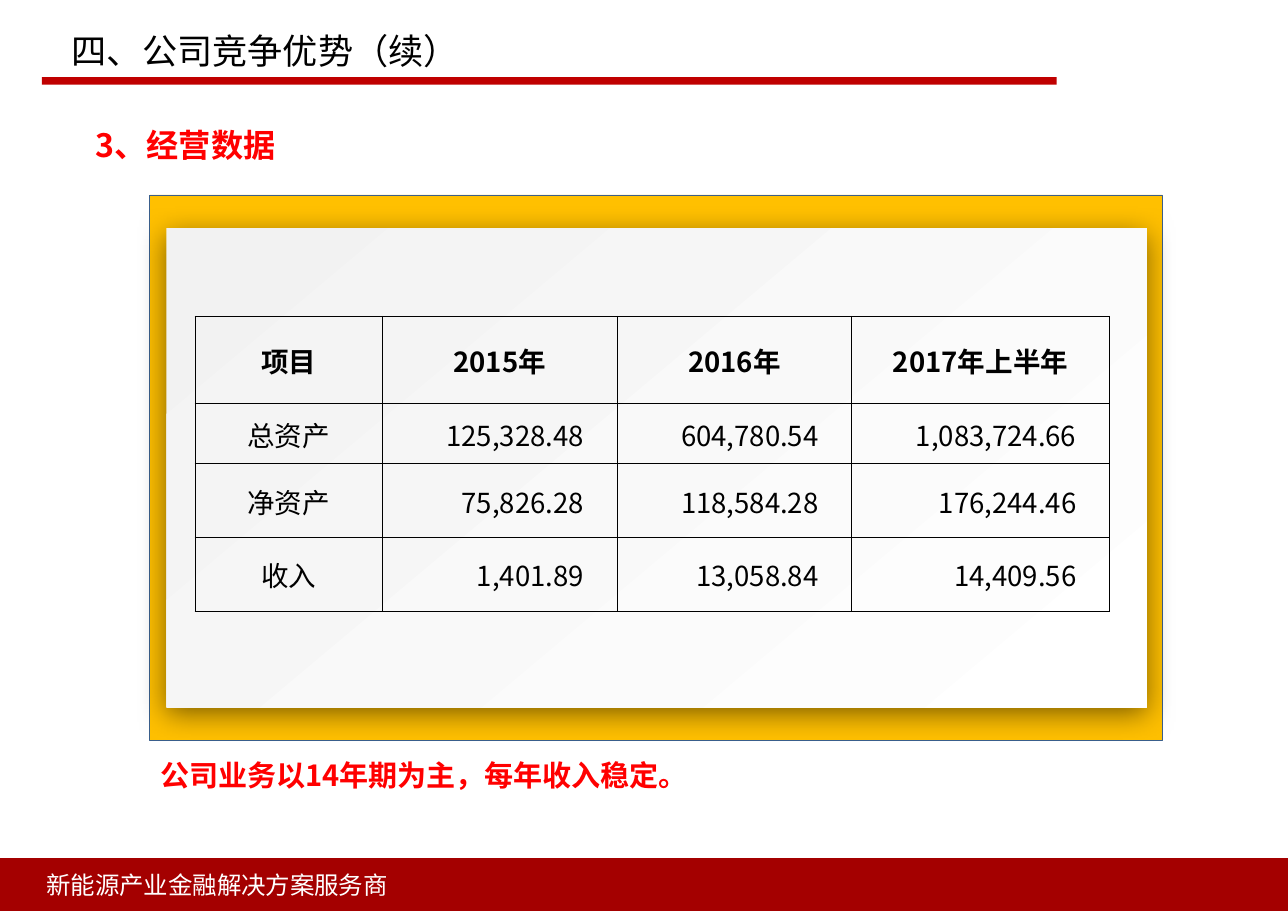
import pptx
import pptx.util
import pptx.dml.color
import pptx.enum.shapes
import pptx.enum.text
import pptx.oxml
import pptx.oxml.ns
from dataclasses import dataclass
from lxml import etree

Inches, Pt = pptx.util.Inches, pptx.util.Pt
RGB = pptx.dml.color.RGBColor.from_string
ALIGN = pptx.enum.text.PP_ALIGN
ANCHOR = pptx.enum.text.MSO_ANCHOR
RECT = pptx.enum.shapes.MSO_SHAPE.RECTANGLE
qn = pptx.oxml.ns.qn


@dataclass(frozen=True)
class Theme:
    font: str = "Noto Sans CJK SC"
    black: str = "000000"
    white: str = "FFFFFF"
    red: str = "FF0000"
    rule: str = "C00000"
    footer: str = "A40000"
    frame: str = "FFC000"
    frame_line: str = "3A5F8C"
    panel: str = "F2F2F2"
    title_size: float = 23
    heading_size: float = 21
    note_size: float = 19
    table_size: float = 18
    footer_size: float = 16


T = Theme()
COLUMNS = [1.7, 2.13, 2.13, 2.34]
ROWS = [0.79, 0.55, 0.67, 0.67]
DATA = [
    ["项目", "2015年", "2016年", "2017年上半年"],
    ["总资产", "125,328.48", "604,780.54", "1,083,724.66"],
    ["净资产", "75,826.28", "118,584.28", "176,244.46"],
    ["收入", "1,401.89", "13,058.84", "14,409.56"],
]


def set_attrs(obj, values):
    for name, value in values.items():
        setattr(obj, name, value)


def margins(left, top, right, bottom):
    return {"margin_left": Inches(left), "margin_top": Inches(top),
            "margin_right": Inches(right), "margin_bottom": Inches(bottom)}


def write(tf, text, size, color, bold=False, align=ALIGN.LEFT):
    p = tf.paragraphs[0]
    p.alignment = align
    r = p.add_run()
    r.text = text
    set_attrs(r.font, {"name": T.font, "size": Pt(size), "bold": bold})
    r.font.color.rgb = RGB(color)
    ea = etree.SubElement(r.font._element, qn("a:ea"))
    ea.set("typeface", T.font)


def add_text(s, at, text, size, color, bold=False, wrap=True, inset=(0.1, 0.05, 0.1, 0.05)):
    tf = s.shapes.add_textbox(*map(Inches, at)).text_frame
    set_attrs(tf, {"word_wrap": wrap, **margins(*inset)})
    write(tf, text, size, color, bold)


def add_rect(s, at, fill, line=None):
    sp = s.shapes.add_shape(RECT, *map(Inches, at))
    sp.shadow.inherit = False
    sp.fill.solid()
    sp.fill.fore_color.rgb = RGB(fill)
    if line:
        sp.line.color.rgb = RGB(line)
        sp.line.width = Pt(0.5)
    else:
        sp.line.fill.background()
    return sp


def add_panel(s, at):
    sp = add_rect(s, at, T.panel)
    sp.fill.gradient()
    sp.fill.gradient_angle = 310
    for stop, position, color in zip(sp.fill.gradient_stops, (0, 1), (T.panel, T.white)):
        stop.position = position
        stop.color.rgb = RGB(color)
    # Soft shadow below the panel
    effects = sp._element.spPr.find(qn("a:effectLst"))
    shadow = etree.SubElement(effects, qn("a:outerShdw"), blurRad=str(Pt(19)),
                              dist=str(Pt(5)), dir="5400000", rotWithShape="0")
    color = etree.SubElement(shadow, qn("a:srgbClr"), val=T.black)
    etree.SubElement(color, qn("a:alpha"), val="49000")


def add_borders(cell):
    tcPr = cell._tc.get_or_add_tcPr()
    for i, side in enumerate(("lnL", "lnR", "lnT", "lnB")):
        ln = etree.Element(qn("a:" + side), w=str(Pt(0.5)))
        fill = etree.SubElement(ln, qn("a:solidFill"))
        etree.SubElement(fill, qn("a:srgbClr"), val=T.black)
        tcPr.insert(i, ln)


def add_data_table(s, left, top):
    table = s.shapes.add_table(len(ROWS), len(COLUMNS), Inches(left), Inches(top),
                               Inches(sum(COLUMNS)), Inches(sum(ROWS))).table
    set_attrs(table, {"first_row": False, "horz_banding": False})
    for column, width in zip(table.columns, COLUMNS):
        column.width = Inches(width)
    for i, (height, values) in enumerate(zip(ROWS, DATA)):
        table.rows[i].height = Inches(height)
        for j, value in enumerate(values):
            number = i > 0 and j > 0
            cell = table.cell(i, j)
            set_attrs(cell, {"vertical_anchor": ANCHOR.MIDDLE,
                             **margins(0.01, 0.01, 0.3 if number else 0.01, 0)})
            cell.fill.background()
            add_borders(cell)
            write(cell.text_frame, value, T.table_size, T.black, i == 0,
                  ALIGN.RIGHT if number else ALIGN.CENTER)


def main():
    prs = pptx.Presentation()
    set_attrs(prs, {"slide_width": Inches(11.69), "slide_height": Inches(8.27)})
    s = prs.slides.add_slide(prs.slide_layouts[6])

    # Title rule and footer band
    add_rect(s, (0.38, 0.7, 9.21, 0.07), T.rule)
    tf = add_rect(s, (0, 7.79, 11.69, 0.48), T.footer).text_frame
    set_attrs(tf, {"vertical_anchor": ANCHOR.MIDDLE, "word_wrap": True,
                   **margins(0.42, 0.06, 0.31, 0.06)})
    write(tf, "新能源产业金融解决方案服务商", T.footer_size, T.white)

    # Headings
    add_text(s, (0.53, 0.21, 4.51, 0.64), "四、公司竞争优势（续）",
             T.title_size, T.black, inset=(0.12, 0.06, 0.12, 0.06))
    add_text(s, (0.77, 1.09, 3.05, 0.45), "3、经营数据", T.heading_size, T.red, bold=True)

    # Framed table
    add_rect(s, (1.36, 1.77, 9.19, 4.95), T.frame, T.frame_line)
    add_panel(s, (1.51, 2.07, 8.9, 4.35))
    add_data_table(s, 1.77, 2.87)

    # Conclusion
    add_text(s, (1.36, 6.83, 5.04, 0.42), "公司业务以14年期为主，每年收入稳定。",
             T.note_size, T.red, bold=True, wrap=False)

    prs.save("out.pptx")


if __name__ == "__main__":
    main()
